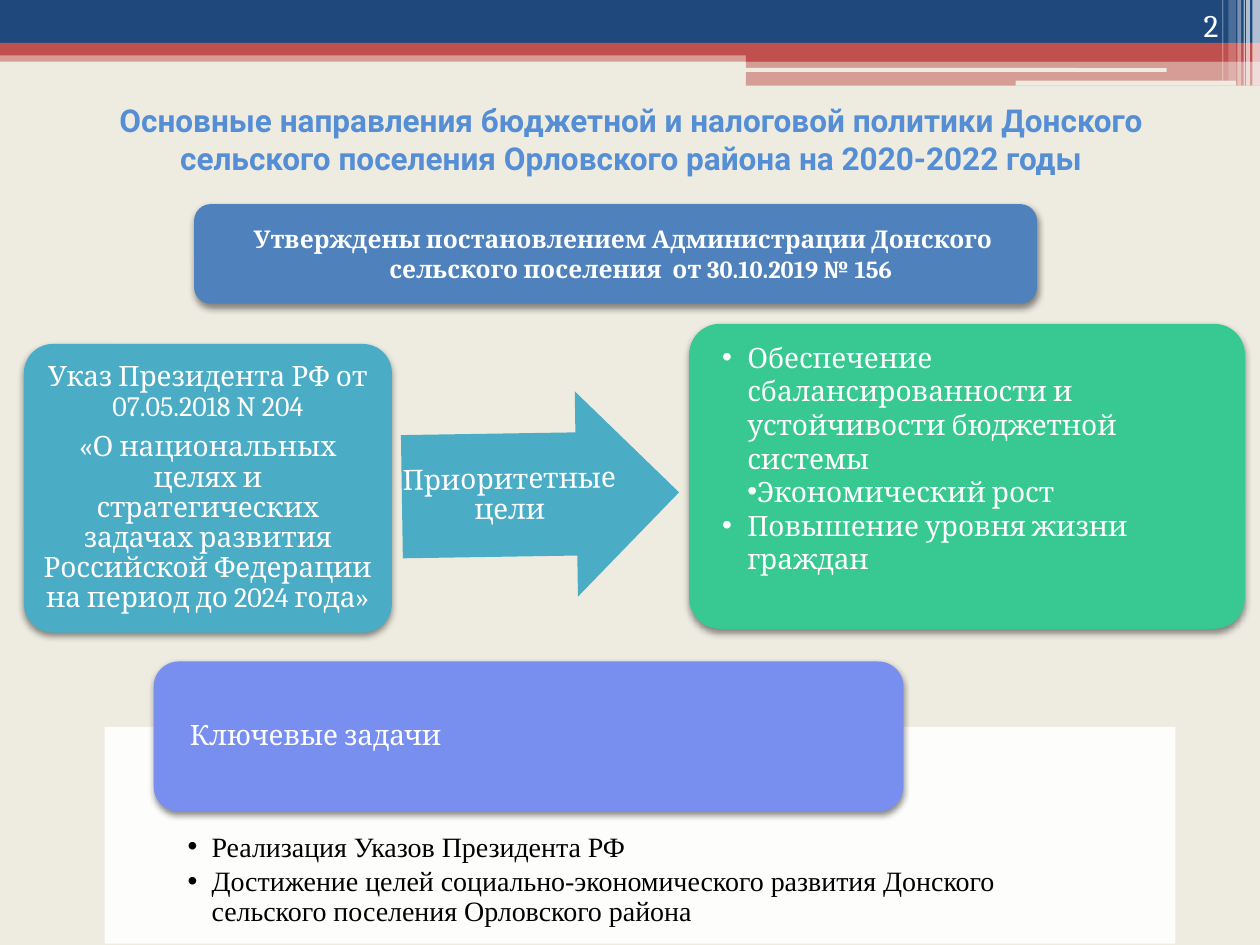
from lxml import etree
from pptx import Presentation, util as u
from pptx.dml import color
from pptx.enum import shapes, text
from pptx.oxml import ns

COLORS = {"paper": "EEECE1", "navy": "1F497D", "red": "C0504D", "white": "FFFFFF",
          "title": "558ED5", "blue": "4F81BD", "teal": "4BACC6", "green": "37C991",
          "violet": "798FEF", "black": "000000"}
COLUMNS, ROWS = 100, 75
KINDS = shapes.MSO_SHAPE
CENTER, RIGHT = text.PP_ALIGN.CENTER, text.PP_ALIGN.RIGHT
MIDDLE, TOP, BOTTOM = text.MSO_ANCHOR.MIDDLE, text.MSO_ANCHOR.TOP, text.MSO_ANCHOR.BOTTOM


def apply(target, values):
    """Set every attribute in a dict of format values."""
    for name, value in values.items():
        setattr(target, name, value)


def add_xml(parent, tag, **attributes):
    """Append a drawing element and return it."""
    return etree.SubElement(parent, ns.qn(tag), attributes)


def place(shape, box):
    """Put a shape on a box of grid columns and rows."""
    names = ("left", "top", "width", "height")
    apply(shape, {name: u.Inches(cells / 10) for name, cells in zip(names, box)})


def paint(shape, fill, alpha=100, shadow=False):
    """Fill a shape without outline, with optional transparency and drop shadow."""
    shape.fill.solid()
    shape.fill.fore_color.rgb = color.RGBColor.from_string(COLORS[fill])
    shape.line.fill.background()
    properties = shape._element.spPr
    if alpha < 100:
        tint = properties.find(".//" + ns.qn("a:srgbClr"))
        add_xml(tint, "a:alpha", val=str(alpha * 1000))
    effects = add_xml(properties, "a:effectLst")
    if shadow:
        drop = add_xml(effects, "a:outerShdw", blurRad=str(u.Pt(4)), dist=str(u.Pt(2)),
                       dir="5400000", rotWithShape="0")
        tint = add_xml(drop, "a:srgbClr", val=COLORS["black"])
        add_xml(tint, "a:alpha", val="45000")


def add_block(page, box, fill, kind=KINDS.RECTANGLE, adjust=None, **look):
    """Add a painted preset shape."""
    shape = page.shapes.add_shape(kind, 0, 0, 0, 0)
    place(shape, box)
    for index, value in enumerate(adjust or ()):
        shape.adjustments[index] = value
    paint(shape, fill, **look)
    return shape


def write(shape, lines, ink="white", size=16, font="Cambria", bold=False, align=None,
          anchor=MIDDLE, insets=(0.1, 0.05, 0.1, 0.05), spacing=1, after=0,
          indents=(0, 0), bullet=False):
    """Write formatted paragraphs into a shape; a line may carry its own indents."""
    frame = shape.text_frame
    sides = ("margin_left", "margin_top", "margin_right", "margin_bottom")
    apply(frame, {"word_wrap": True, "auto_size": text.MSO_AUTO_SIZE.NONE,
                  "vertical_anchor": anchor,
                  **{side: u.Inches(gap) for side, gap in zip(sides, insets)}})
    for index, line in enumerate(lines):
        words, (margin, hanging) = line if isinstance(line, tuple) else (line, indents)
        para = frame.add_paragraph() if index else frame.paragraphs[0]
        apply(para, {"alignment": align or text.PP_ALIGN.LEFT, "line_spacing": spacing,
                     "space_before": u.Pt(0), "space_after": u.Pt(after)})
        settings = para._p.get_or_add_pPr()
        settings.set("marL", str(u.Inches(margin)))
        settings.set("indent", str(u.Inches(hanging)))
        if bullet:
            add_xml(settings, "a:buFont", typeface="Arial")
            add_xml(settings, "a:buChar", char="•")
        else:
            add_xml(settings, "a:buNone")
        span = para.add_run()
        span.text = words
        apply(span.font, {"name": font, "size": u.Pt(size), "bold": bold})
        span.font.color.rgb = color.RGBColor.from_string(COLORS[ink])


def add_banner(page, box):
    """Draw the striped band and the page number across the top."""
    left, top, width, _ = box
    bands = [(0, 4, 100, 0.9, "red", 50), (0, 0, 100, 3.4, "navy", 100),
             (0, 3.4, 100, 1, "red", 100), (59.2, 3.9, 40.8, 1, "red", 100),
             (59.2, 4.8, 40.8, 2, "red", 50)]
    for x, y, wide, high, fill, alpha in bands:
        add_block(page, (left + x, top + y, wide, high), fill, alpha=alpha)
    for x, y, wide, high in [(59.1, 5.4, 33.5, 0.3), (80.6, 6.4, 17.5, 0.4)]:
        add_block(page, (left + x, top + y, wide, high), "paper", KINDS.ROUNDED_RECTANGLE)
    stripes = [(99.4, 0.6, 6.8, 65), (98.9, 0.3, 6.8, 65), (98.7, 0.1, 6.8, 60),
               (98.2, 0.3, 6.8, 40), (97.5, 0.6, 6.4, 20), (97, 0.1, 6.4, 30)]
    for x, wide, high, alpha in stripes:
        add_block(page, (left + x, top, wide, high), "white", alpha=alpha)
    number = page.shapes.add_textbox(0, 0, 0, 0)
    place(number, (left + width - 10.6, top, 8.3, 4))
    write(number, ["2"], size=18, align=RIGHT, anchor=BOTTOM)


def add_heading(page, box):
    """Fill the title placeholder."""
    title = page.shapes.title
    place(title, box)
    write(title, ["Основные направления бюджетной и налоговой политики Донского "
                  "сельского поселения Орловского района на 2020-2022 годы"],
          ink="title", size=18, font="Roboto", bold=True, align=CENTER)


def add_decree(page, box):
    """Turn the body placeholder into the rounded approval plate."""
    body = page.placeholders[1]
    place(body, box)
    geometry = add_xml(body._element.spPr, "a:prstGeom", prst="roundRect")
    add_xml(geometry, "a:avLst")
    paint(body, "blue", shadow=True)
    write(body, ["Утверждены постановлением Администрации Донского "
                 "сельского поселения  от 30.10.2019 № 156"],
          size=14, bold=True, align=CENTER, indents=(0.4, -0.28))


def add_goals(page, box):
    """Draw the decree card, the arrow and the card of priority goals."""
    left, top, width, height = box
    card = {"kind": KINDS.ROUNDED_RECTANGLE, "adjust": [0.1], "shadow": True}
    centered = {"align": CENTER, "spacing": 0.9, "after": 5.6}
    source = add_block(page, (left, top + 1.6, 29.2, 22.9), "teal", **card)
    write(source, ["Указ Президента РФ от 07.05.2018 N 204",
                   "«О национальных целях и стратегических задачах развития "
                   "Российской Федерации на период до 2024 года»"],
          insets=(0.07,) * 4, **centered)
    arrow = add_block(page, (left + 30, top + 5.4, 22, 16.3), "teal",
                      KINDS.RIGHT_ARROW, [0.6, 0.5])
    arrow.rotation = 359.1
    write(arrow, ["Приоритетные цели"], insets=(0,) * 4, **centered)
    goals = add_block(page, (left + width - 44.1, top, 44.1, height), "green", **card)
    write(goals, ["Обеспечение сбалансированности и устойчивости бюджетной системы",
                  ("Экономический рост", (0, 0.2)),
                  "Повышение уровня жизни граждан"],
          anchor=TOP, insets=(0.19, 0.06, 0.19, 0.05), indents=(0.2, -0.2), bullet=True)


def add_tasks(page, box):
    """Draw the task panel with its overlapping label."""
    left, top, width, height = box
    panel = add_block(page, (left, top + 5.2, width, height - 5.2), "white", alpha=90)
    write(panel, ["Реализация Указов Президента РФ",
                  "Достижение целей социально-экономического развития Донского "
                  "сельского поселения Орловского района"],
          ink="black", font="Times New Roman", anchor=TOP, insets=(0.66, 0.84, 0.66, 0.12),
          spacing=0.9, after=2.4, indents=(0.19, -0.19), bullet=True)
    label = add_block(page, (left + 3.9, top, width * 0.7, 11.9), "violet",
                      KINDS.ROUNDED_RECTANGLE, shadow=True)
    write(label, ["Ключевые задачи"], insets=(0.23, 0, 0.23, 0), spacing=0.9, after=5.6)


def main():
    """Build the deck and save it."""
    deck = Presentation()
    deck.slide_width, deck.slide_height = u.Inches(COLUMNS / 10), u.Inches(ROWS / 10)
    page = deck.slides.add_slide(deck.slide_layouts[1])
    page.background.fill.solid()
    page.background.fill.fore_color.rgb = color.RGBColor.from_string(COLORS["paper"])
    add_banner(page, (0, 0, COLUMNS, 6.8))
    add_heading(page, (5.1, 5.2, 90, 11.7))
    add_decree(page, (15.4, 16.2, 66.9, 7.9))
    add_goals(page, (1.9, 25.7, 96.9, 24.2))
    add_tasks(page, (8.3, 52.5, 85, 22.4))
    deck.save("out.pptx")


if __name__ == "__main__":
    main()
